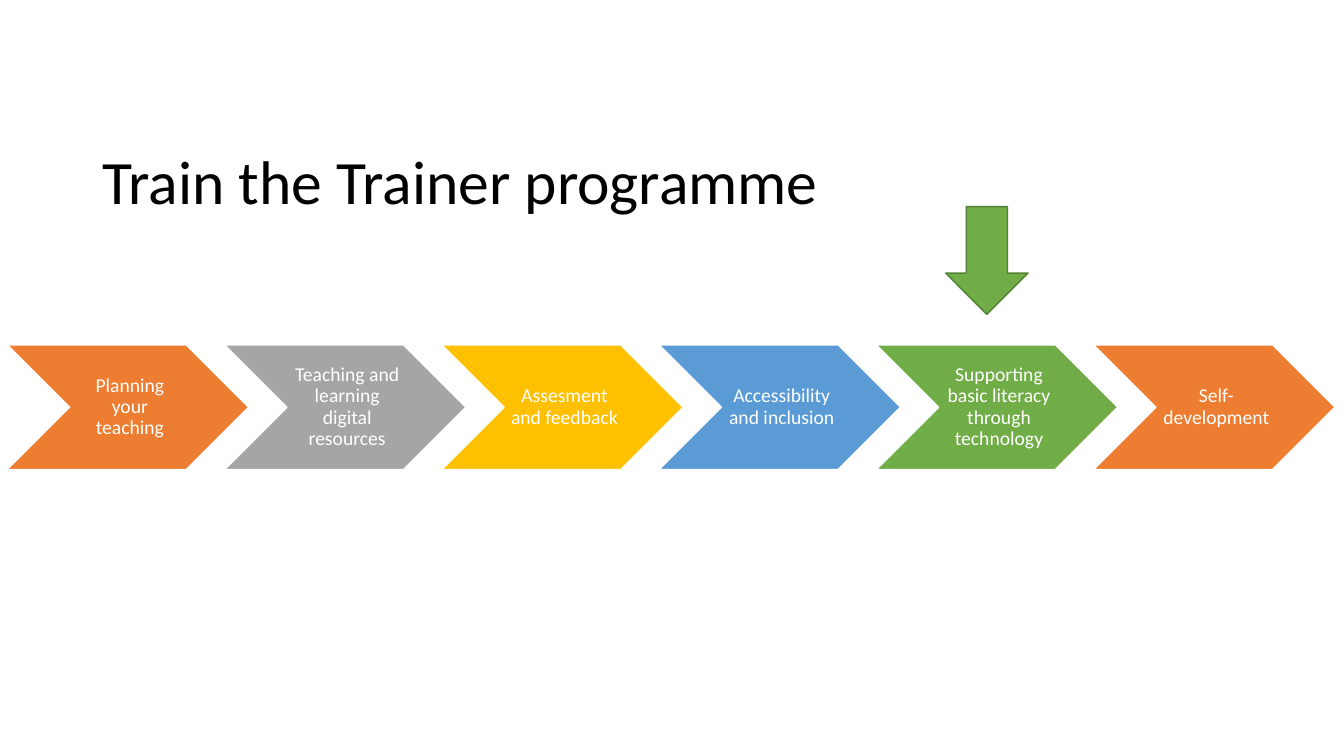
from pptx import Presentation
from pptx import util as u
from pptx.dml.color import RGBColor
from pptx.enum import shapes, text

Pt = u.Pt
BLACK = RGBColor(0x00, 0x00, 0x00)
WHITE = RGBColor(0xFF, 0xFF, 0xFF)
ORANGE = RGBColor(0xED, 0x7D, 0x31)
GREY = RGBColor(0xA5, 0xA5, 0xA5)
GOLD = RGBColor(0xFF, 0xC0, 0x00)
BLUE = RGBColor(0x5B, 0x9B, 0xD5)
GREEN = RGBColor(0x70, 0xAD, 0x47)
DARK_GREEN = RGBColor(0x53, 0x80, 0x35)

MODULES = [
    ("Planning your teaching", ORANGE),
    ("Teaching and learning digital resources", GREY),
    ("Assesment and feedback", GOLD),
    ("Accessibility and inclusion", BLUE),
    ("Supporting basic literacy through technology", GREEN),
    ("Self-development", ORANGE),
]
FIRST_LEFT, STEP = 5.2, 155.2
CHEVRON_TOP, CHEVRON_WIDTH, CHEVRON_HEIGHT = 246.4, 172.4, 89
LABEL_INDENT, LABEL_WIDTH = 44.5, 83.4


def apply(target, values):
    for name, value in values.items():
        setattr(target, name, value)


class SlideBuilder:
    font_name = "Calibri"
    line_spacing = 0.9

    def __init__(self, presentation):
        self.slide = presentation.slides.add_slide(presentation.slide_layouts[5])

    def fill_text(self, shape, wording, size, color, alignment, margins):
        frame = shape.text_frame
        apply(frame, {"word_wrap": True, "auto_size": text.MSO_AUTO_SIZE.NONE,
                      "vertical_anchor": text.MSO_ANCHOR.MIDDLE})
        sides = ("margin_left", "margin_top", "margin_right", "margin_bottom")
        apply(frame, dict(zip(sides, map(Pt, margins))))
        paragraph = frame.paragraphs[0]
        paragraph.text = wording
        apply(paragraph, {"alignment": alignment, "line_spacing": self.line_spacing,
                          "space_before": Pt(0)})
        apply(paragraph.font, {"name": self.font_name, "size": Pt(size)})
        paragraph.font.color.rgb = color

    def title(self, wording, left, top, width, height):
        shape = self.slide.shapes.title
        apply(shape, {"left": Pt(left), "top": Pt(top),
                      "width": Pt(width), "height": Pt(height)})
        self.fill_text(shape, wording, 44, BLACK, text.PP_ALIGN.LEFT, (7.2, 3.6, 7.2, 3.6))

    def shape(self, kind, left, top, width, height, fill, line):
        shape = self.slide.shapes.add_shape(
            kind, Pt(left), Pt(top), Pt(width), Pt(height))
        shape.shadow.inherit = False
        shape.fill.solid()
        shape.fill.fore_color.rgb = fill
        shape.line.color.rgb = line
        shape.line.width = Pt(1)
        return shape

    def label(self, wording, left, top, width, height):
        box = self.slide.shapes.add_textbox(Pt(left), Pt(top), Pt(width), Pt(height))
        self.fill_text(box, wording, 14, WHITE, text.PP_ALIGN.CENTER, (4.4, 1.5, 1.5, 1.5))


def main():
    presentation = Presentation()
    apply(presentation, {"slide_width": Pt(960), "slide_height": Pt(540)})
    builder = SlideBuilder(presentation)

    # Title
    builder.title("Train the Trainer programme", 66, 95, 828, 73.4)

    # Programme modules
    for index, (name, color) in enumerate(MODULES):
        left = FIRST_LEFT + index * STEP
        chevron = builder.shape(shapes.MSO_SHAPE.CHEVRON, left, CHEVRON_TOP,
                                CHEVRON_WIDTH, CHEVRON_HEIGHT, color, WHITE)
        chevron.adjustments[0] = 0.5
        builder.label(name, left + LABEL_INDENT, CHEVRON_TOP, LABEL_WIDTH, CHEVRON_HEIGHT)

    # Arrow to the current module
    builder.shape(shapes.MSO_SHAPE.DOWN_ARROW, 675.4, 147.6, 59, 77, GREEN, DARK_GREEN)

    presentation.save("out.pptx")


if __name__ == "__main__":
    main()
